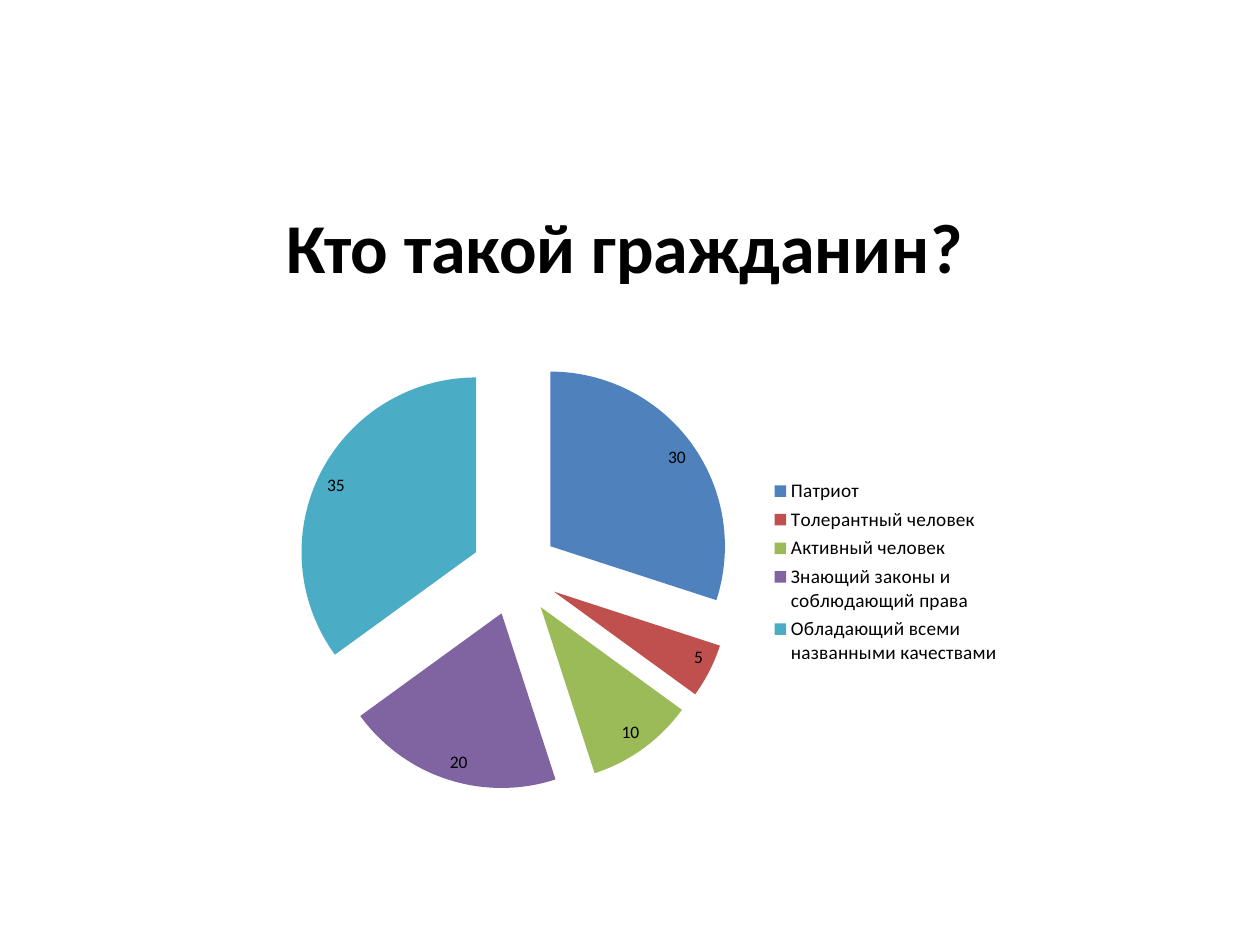
import lxml.etree
import pptx
import pptx.chart.data
import pptx.dml.color
import pptx.enum.chart
import pptx.enum.text
import pptx.oxml.ns
import pptx.util
from pptx.util import Cm

BLACK = pptx.dml.color.RGBColor(0x00, 0x00, 0x00)
BLUE = pptx.dml.color.RGBColor(0x4F, 0x81, 0xBD)
RED = pptx.dml.color.RGBColor(0xC0, 0x50, 0x4D)
GREEN = pptx.dml.color.RGBColor(0x9B, 0xBB, 0x59)
PURPLE = pptx.dml.color.RGBColor(0x80, 0x64, 0xA2)
TEAL = pptx.dml.color.RGBColor(0x4B, 0xAC, 0xC6)

ANSWERS = [
    ("Патриот", 30, BLUE),
    ("Толерантный человек", 5, RED),
    ("Активный человек", 10, GREEN),
    ("Знающий законы и соблюдающий права", 20, PURPLE),
    ("Обладающий всеми названными качествами", 35, TEAL),
]
EXPLOSION = 25


def apply_format(target, values):
    """Set each attribute in values on the target."""
    for name, value in values.items():
        setattr(target, name, value)


def format_font(font, size, bold=False):
    """Give a font the slide's typeface and colour."""
    apply_format(font, {"name": "Calibri", "size": pptx.util.Pt(size), "bold": bold})
    font.color.rgb = BLACK


def place_title(slide, left, top, width, height):
    """Fill the title placeholder inside the given box."""
    title = slide.shapes.title
    apply_format(title, {"left": left, "top": top, "width": width, "height": height})
    text_frame = title.text_frame
    text_frame.text = "Кто такой гражданин?"
    text_frame.vertical_anchor = pptx.enum.text.MSO_ANCHOR.BOTTOM
    paragraph = text_frame.paragraphs[0]
    paragraph.alignment = pptx.enum.text.PP_ALIGN.CENTER
    format_font(paragraph.runs[0].font, 40, bold=True)


def explode_slices(series):
    """Pull all slices of a pie series away from the centre."""
    tag = pptx.oxml.ns.qn("c:explosion")
    explosion = lxml.etree.Element(tag, val=str(EXPLOSION))
    first_point = series._element.find(pptx.oxml.ns.qn("c:dPt"))
    first_point.addprevious(explosion)


def place_answer_chart(slide, left, top, width, height):
    """Draw the exploded pie of answers inside the given box."""
    chart_data = pptx.chart.data.CategoryChartData()
    chart_data.categories = [name for name, _, _ in ANSWERS]
    chart_data.add_series("Series 1", [value for _, value, _ in ANSWERS])
    chart = slide.shapes.add_chart(
        pptx.enum.chart.XL_CHART_TYPE.PIE, left, top, width, height, chart_data
    ).chart
    apply_format(chart, {"has_title": False, "has_legend": True})
    format_font(chart.font, 10)
    apply_format(chart.legend, {
        "position": pptx.enum.chart.XL_LEGEND_POSITION.RIGHT,
        "include_in_layout": False,
    })
    format_font(chart.legend.font, 11)

    plot = chart.plots[0]
    apply_format(plot, {"vary_by_categories": True, "has_data_labels": True})
    apply_format(plot.data_labels, {
        "show_value": True,
        "show_percentage": False,
        "position": pptx.enum.chart.XL_LABEL_POSITION.INSIDE_END,
    })
    format_font(plot.data_labels.font, 10)

    series = plot.series[0]
    for index, (_, _, color) in enumerate(ANSWERS):
        fill = series.points[index].format.fill
        fill.solid()
        fill.fore_color.rgb = color
    explode_slices(series)


def main():
    """Build and save the presentation."""
    presentation = pptx.Presentation()
    apply_format(presentation, {"slide_width": Cm(25.4), "slide_height": Cm(19.05)})
    slide = presentation.slides.add_slide(presentation.slide_layouts[5])
    place_title(slide, Cm(1.27), Cm(1.32), Cm(22.63), Cm(4.6))
    place_answer_chart(slide, Cm(5.28), Cm(6.78), Cm(15.16), Cm(9.5))
    presentation.save("out.pptx")


if __name__ == "__main__":
    main()
